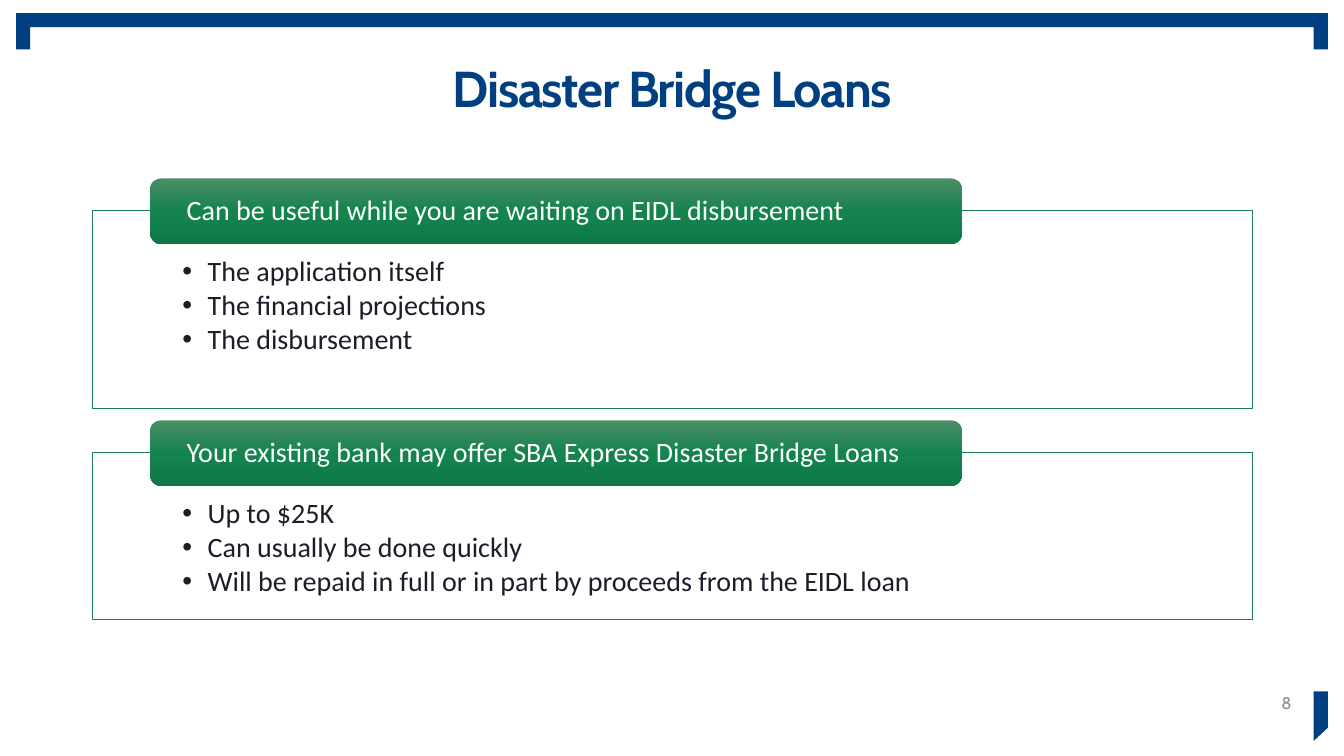
from copy import deepcopy

from lxml import etree
from pptx import Presentation
from pptx.dml.color import RGBColor
from pptx.enum.shapes import MSO_SHAPE
from pptx.enum.text import MSO_ANCHOR, MSO_AUTO_SIZE, PP_ALIGN
from pptx.oxml.ns import qn
from pptx.util import Inches, Pt

RECT, ROUNDED = MSO_SHAPE.RECTANGLE, MSO_SHAPE.ROUNDED_RECTANGLE
TOP, MIDDLE = MSO_ANCHOR.TOP, MSO_ANCHOR.MIDDLE
LEFT, CENTER, RIGHT = PP_ALIGN.LEFT, PP_ALIGN.CENTER, PP_ALIGN.RIGHT
NO_AUTOFIT = MSO_AUTO_SIZE.NONE

NAVY, WHITE, INK, GREY = "003F80", "FFFFFF", "1B1E29", "8D8D8E"
GREEN_LINE = "197E4E"
HEADING_GRADIENT = [(0, "4D8E67"), (0.5, "14834E"), (1, "0D7946")]

SECTIONS = [
    (2.09, 1.96, "Can be useful while you are waiting on EIDL disbursement",
     ["The application itself", "The financial projections", "The disbursement"]),
    (4.49, 1.65, "Your existing bank may offer SBA Express Disaster Bridge Loans",
     ["Up to $25K", "Can usually be done quickly",
      "Will be repaid in full or in part by proceeds from the EIDL loan"]),
]


def color(hex_value):
    return RGBColor.from_string(hex_value)


def add_bullet(paragraph):
    properties = paragraph._p.get_or_add_pPr()
    properties.set("marL", str(Inches(0.25)))
    properties.set("indent", str(Inches(-0.25)))
    etree.SubElement(properties, qn("a:buFont")).set("typeface", "Arial")
    etree.SubElement(properties, qn("a:buChar")).set("char", "•")


def write_text(shape, lines, font="Calibri", size=20, ink=INK, bold=False, align=LEFT,
               anchor=TOP, insets=(0.1, 0.05, 0.1, 0.05), line_spacing=0.9,
               space_after=0, bullets=False, tracking=None):
    frame = shape.text_frame
    frame.word_wrap = True
    frame.auto_size = NO_AUTOFIT
    frame.vertical_anchor = anchor
    (frame.margin_left, frame.margin_top,
     frame.margin_right, frame.margin_bottom) = map(Inches, insets)
    frame.text = "\n".join(lines)
    for paragraph in frame.paragraphs:
        paragraph.alignment = align
        paragraph.line_spacing = line_spacing
        paragraph.space_before = Pt(0)
        paragraph.space_after = Pt(space_after)
        if bullets:
            paragraph.level = 1
            add_bullet(paragraph)
        for run in paragraph.runs:
            run.font.name = font
            run.font.size = Pt(size)
            run.font.bold = bold
            run.font.color.rgb = color(ink)
            if tracking:
                run._r.get_or_add_rPr().set("spc", str(tracking * 100))


def add_block(slide, preset, left, top, width, height, fill, line=None):
    block = slide.shapes.add_shape(preset, *map(Inches, (left, top, width, height)))
    block.shadow.inherit = False
    block.fill.solid()
    block.fill.fore_color.rgb = color(fill)
    if line:
        block.line.color.rgb = color(line)
        block.line.width = Pt(0.5)
    else:
        block.line.fill.background()
    return block


def shade_vertically(shape, stops):
    shape.fill.gradient()
    shape.fill.gradient_angle = 270
    stop_list = shape._element.spPr.find(".//" + qn("a:gsLst"))
    stop_list.insert(1, deepcopy(stop_list[0]))
    for stop, (position, hex_value) in zip(shape.fill.gradient_stops, stops):
        stop.position = position
        stop.color.rgb = color(hex_value)


def add_page_frame(slide):
    for left, width, height in [(0.16, 13.01, 0.14), (0.16, 0.14, 0.36), (13.03, 0.14, 0.36)]:
        add_block(slide, RECT, left, 0.13, width, height, NAVY)
    outline = slide.shapes.build_freeform(Inches(13.03), Inches(6.86))
    corners = [(13.17, 6.86), (13.17, 7.22), (13.03, 7.35)]
    outline.add_line_segments([(Inches(x), Inches(y)) for x, y in corners], close=True)
    corner_tab = outline.convert_to_shape()
    corner_tab.shadow.inherit = False
    corner_tab.fill.solid()
    corner_tab.fill.fore_color.rgb = color(NAVY)
    corner_tab.line.fill.background()


def add_title(slide, text):
    title = slide.shapes.title
    title.left, title.top, title.width, title.height = map(Inches, (0.92, 0.58, 11.5, 0.65))
    write_text(title, [text], font="Cabin", size=36, ink=NAVY, bold=True,
               align=CENTER, tracking=-1)


def add_section(slide, top, height, heading, points):
    panel = add_block(slide, RECT, 0.92, top, 11.5, height, WHITE, line=GREEN_LINE)
    panel_color = panel._element.spPr.find(qn("a:solidFill"))[0]
    etree.SubElement(panel_color, qn("a:alpha")).set("val", "90000")
    write_text(panel, points, insets=(0.89, 0.46, 0.89, 0.16), space_after=2.7, bullets=True)
    banner = add_block(slide, ROUNDED, 1.49, top - 0.32, 8.05, 0.65, GREEN_LINE)
    shade_vertically(banner, HEADING_GRADIENT)
    write_text(banner, [heading], ink=WHITE, anchor=MIDDLE, insets=(0.33, 0, 0.33, 0))


def add_page_number(slide, number):
    box = slide.shapes.add_textbox(*map(Inches, (9.91, 6.77, 3, 0.4)))
    write_text(box, [number], font="Cabin", size=12, ink=GREY, align=RIGHT,
               anchor=MIDDLE, line_spacing=1.0)


def main():
    presentation = Presentation()
    presentation.slide_width = Inches(13.33)
    presentation.slide_height = Inches(7.5)
    slide = presentation.slides.add_slide(presentation.slide_layouts[5])
    add_page_frame(slide)
    add_title(slide, "Disaster Bridge Loans")
    for section in SECTIONS:
        add_section(slide, *section)
    add_page_number(slide, "8")
    presentation.save("out.pptx")


if __name__ == "__main__":
    main()
